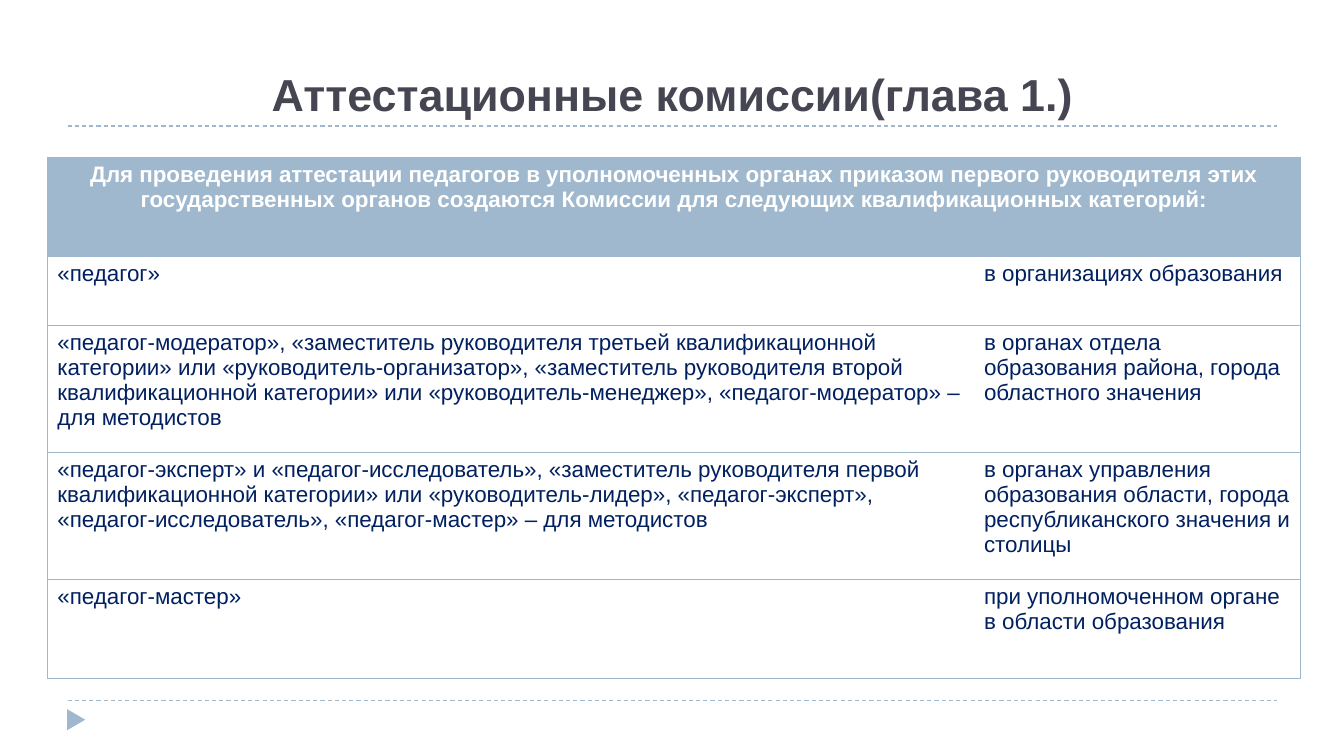
from dataclasses import dataclass

from lxml import etree
from pptx import Presentation
from pptx.dml.color import RGBColor
from pptx.enum import dml, shapes, text
from pptx.oxml import ns
from pptx.util import Inches, Pt


@dataclass(frozen=True)
class Theme:
    font: str = "Arial"
    accent: str = "9FB8CD"
    title: str = "464653"
    body: str = "002060"
    header: str = "FFFFFF"
    title_size: int = 32
    table_size: int = 16
    line_width: float = 0.75


@dataclass(frozen=True)
class Category:
    names: str
    place: str
    height: float


THEME = Theme()
TITLE = "Аттестационные комиссии(глава 1.)"
HEADER = (
    "Для проведения аттестации педагогов в уполномоченных органах приказом "
    "первого руководителя этих государственных органов создаются Комиссии "
    "для следующих квалификационных категорий:"
)
HEADER_HEIGHT = 0.98
COLUMN_WIDTHS = (9.19, 3.24)
RULE_TOPS = (1.25, 6.95)
CATEGORIES = (
    Category("«педагог»", "в организациях образования", 0.69),
    Category(
        "«педагог-модератор», «заместитель руководителя третьей "
        "квалификационной категории» или «руководитель-организатор», "
        "«заместитель руководителя второй квалификационной категории» или "
        "«руководитель-менеджер», «педагог-модератор» – для методистов",
        "в органах отдела образования района, города областного значения",
        1.26,
    ),
    Category(
        "«педагог-эксперт» и «педагог-исследователь», «заместитель "
        "руководителя первой квалификационной категории» или "
        "«руководитель-лидер», «педагог-эксперт», «педагог-исследователь», "
        "«педагог-мастер» – для методистов",
        "в органах управления образования области, города "
        "республиканского значения и столицы",
        1.26,
    ),
    Category("«педагог-мастер»", "при уполномоченном органе в области образования", 0.98),
)


def format_text(tf, size: int, color: str, bold: bool, align) -> None:
    p = tf.paragraphs[0]
    p.alignment = align
    p.font.name = THEME.font
    p.font.size = Pt(size)
    p.font.bold = bold
    p.font.color.rgb = RGBColor.from_string(color)


def set_borders(cell, sides: str) -> None:
    tcPr = cell._tc.get_or_add_tcPr()
    for side in "LRTB":
        ln = etree.SubElement(tcPr, ns.qn(f"a:ln{side}"), w=str(Pt(THEME.line_width)))
        if side in sides:
            fill = etree.SubElement(ln, ns.qn("a:solidFill"))
            etree.SubElement(fill, ns.qn("a:srgbClr"), val=THEME.accent)
        else:
            etree.SubElement(ln, ns.qn("a:noFill"))


def add_rule(s, top: float) -> None:
    sp = s.shapes.add_connector(
        shapes.MSO_CONNECTOR.STRAIGHT, Inches(0.67), Inches(top), Inches(12.67), Inches(top)
    )
    sp.line.color.rgb = RGBColor.from_string(THEME.accent)
    sp.line.width = Pt(THEME.line_width)
    sp.line.dash_style = dml.MSO_LINE.DASH
    etree.SubElement(sp._element.spPr, ns.qn("a:effectLst"))


def add_marker(s) -> None:
    sp = s.shapes.add_shape(
        shapes.MSO_SHAPE.ISOSCELES_TRIANGLE,
        Inches(0.65), Inches(7.05), Inches(0.21), Inches(0.18),
    )
    sp.rotation = 90
    sp.shadow.inherit = False
    sp.fill.solid()
    sp.fill.fore_color.rgb = RGBColor.from_string(THEME.accent)
    sp.line.fill.background()


def add_title(s) -> None:
    sp = s.shapes.title
    sp.left, sp.top, sp.width, sp.height = map(Inches, (0.67, 0.17, 12, 1.08))
    tf = sp.text_frame
    tf.text = TITLE
    tf.vertical_anchor = text.MSO_ANCHOR.BOTTOM
    format_text(tf, THEME.title_size, THEME.title, True, text.PP_ALIGN.CENTER)


def add_categories(s) -> None:
    heights = [HEADER_HEIGHT, *(c.height for c in CATEGORIES)]
    table = s.shapes.add_table(
        len(heights), len(COLUMN_WIDTHS), Inches(0.47), Inches(1.56),
        Inches(sum(COLUMN_WIDTHS)), Inches(sum(heights)),
    ).table
    table.horz_banding = False
    for column, width in zip(table.columns, COLUMN_WIDTHS):
        column.width = Inches(width)
    for row, height in zip(table.rows, heights):
        row.height = Inches(height)

    header = table.cell(0, 0)
    header.merge(table.cell(0, 1))
    header.text = HEADER
    set_borders(header, "LRTB")
    header.fill.solid()
    header.fill.fore_color.rgb = RGBColor.from_string(THEME.accent)
    format_text(header.text_frame, THEME.table_size, THEME.header, True, text.PP_ALIGN.CENTER)

    for i, category in enumerate(CATEGORIES, 1):
        for j, (words, sides) in enumerate(((category.names, "LTB"), (category.place, "RTB"))):
            cell = table.cell(i, j)
            cell.text = words
            set_borders(cell, sides)
            cell.fill.background()
            format_text(cell.text_frame, THEME.table_size, THEME.body, False, text.PP_ALIGN.LEFT)


def main() -> None:
    prs = Presentation()
    prs.slide_width, prs.slide_height = Inches(13.33), Inches(7.5)
    s = prs.slides.add_slide(prs.slide_layouts[5])
    for top in RULE_TOPS:
        add_rule(s, top)
    add_marker(s)
    add_title(s)
    add_categories(s)
    prs.save("out.pptx")


if __name__ == "__main__":
    main()
